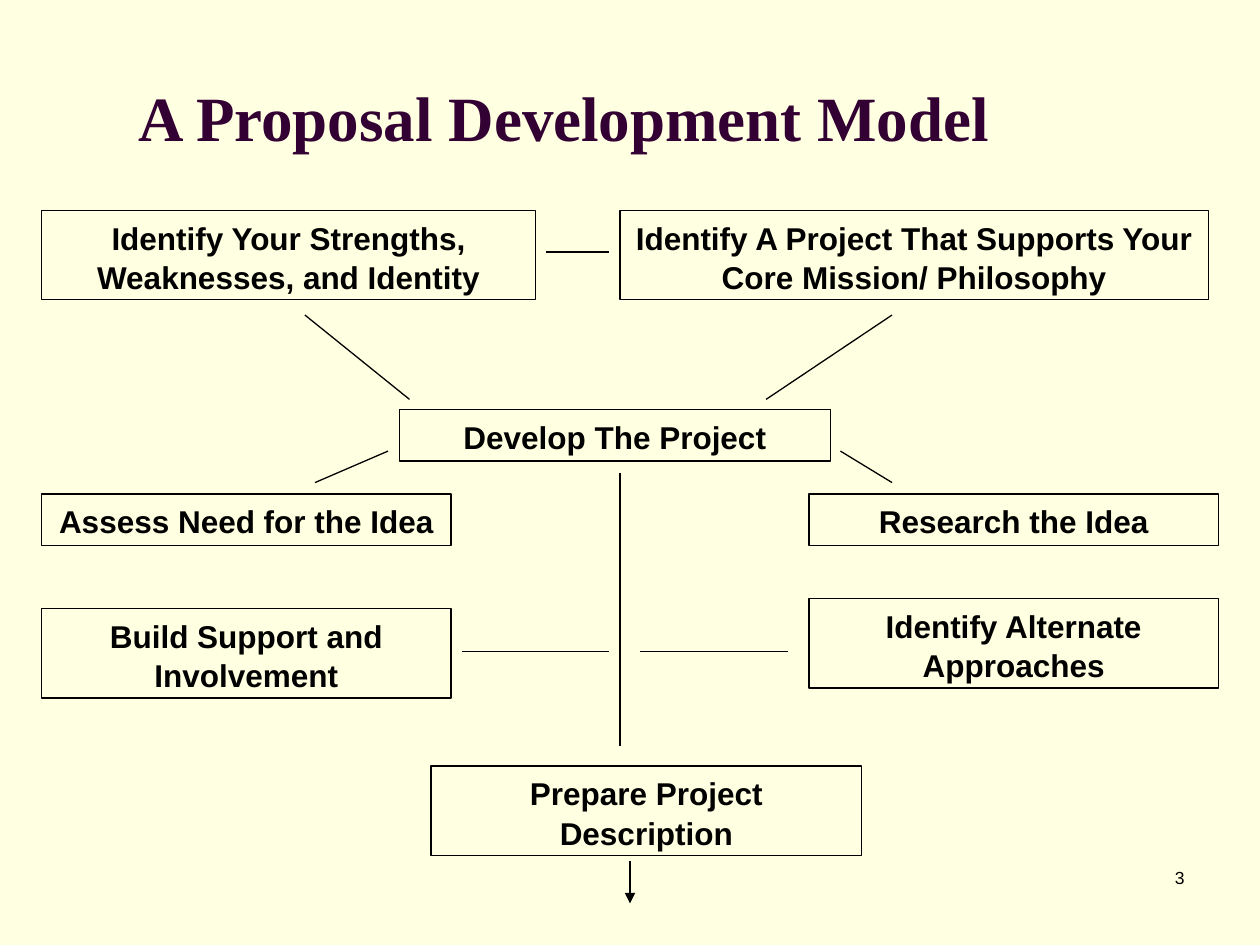
from lxml import etree
from pptx import Presentation
from pptx import util as u
from pptx.dml import color
from pptx.enum import shapes, text
from pptx.oxml import ns

INK = "000000"
BOXES = [
    ("Identify Your Strengths, Weaknesses, and Identity", 0.33, 1.67, 3.92, 0.71),
    ("Identify A Project That Supports Your Core Mission/ Philosophy", 4.92, 1.67, 4.67, 0.71),
    ("Develop The Project", 3.17, 3.25, 3.42, 0.41),
    ("Assess Need for the Idea", 0.33, 3.92, 3.25, 0.41),
    ("Research the Idea", 6.42, 3.92, 3.25, 0.41),
    ("Build Support and Involvement", 0.33, 4.83, 3.25, 0.71),
    ("Identify Alternate Approaches", 6.42, 4.75, 3.25, 0.71),
    ("Prepare Project Description", 3.42, 6.08, 3.42, 0.71),
]
LINES = [
    (4.33, 2, 4.83, 2),
    (2.42, 2.5, 3.25, 3.17),
    (7.08, 2.5, 6.08, 3.17),
    (4.92, 3.75, 4.92, 5.92),
    (3.08, 3.58, 2.5, 3.83),
    (6.67, 3.58, 7.08, 3.83),
    (3.67, 5.17, 4.83, 5.17),
    (5.08, 5.17, 6.25, 5.17),
]


def paint(fill, tone):
    """Give a fill one solid colour."""
    fill.solid()
    fill.fore_color.rgb = color.RGBColor.from_string(tone)


def write(shape, words, size=18, face="Arial", tone=INK, bold=False,
          align="LEFT", anchor="TOP", pitch=1.0):
    """Put formatted text into a shape."""
    frame = shape.text_frame
    frame.word_wrap = True
    frame.vertical_anchor = text.MSO_ANCHOR[anchor]
    para = frame.paragraphs[0]
    para.alignment = text.PP_ALIGN[align]
    para.line_spacing = pitch
    run = para.add_run()
    run.text = words
    run.font.size = u.Pt(size)
    run.font.name = face
    run.font.bold = bold
    paint(run.font.fill, tone)


def label(slide, words, *place, **style):
    """Add a plain text box."""
    write(slide.shapes.add_textbox(*map(u.Inches, place)), words, **style)


def box(slide, words, *place):
    """Add an outlined step of the model."""
    step = slide.shapes.add_shape(shapes.MSO_SHAPE.RECTANGLE, *map(u.Inches, place))
    step.shadow.inherit = False
    step.fill.background()
    paint(step.line.fill, INK)
    step.line.width = u.Pt(0.75)
    write(step, words, bold=True, align="CENTER", pitch=1.05)


def link(slide, *ends, arrow=False):
    """Add a straight line, with an arrowhead at its end if asked."""
    line = slide.shapes.add_connector(shapes.MSO_CONNECTOR.STRAIGHT, *map(u.Inches, ends))
    paint(line.line.fill, INK)
    line.line.width = u.Pt(0.75)
    props = line._element.spPr
    if arrow:
        etree.SubElement(props.find(ns.qn("a:ln")), ns.qn("a:tailEnd"), type="triangle")
    etree.SubElement(props, ns.qn("a:effectLst"))


def main():
    """Build and save the slide."""
    deck = Presentation()
    deck.slide_width, deck.slide_height = u.Inches(10), u.Inches(7.5)
    slide = deck.slides.add_slide(deck.slide_layouts[6])
    paint(slide.background.fill, "FFFFE1")
    label(slide, "3", 7.42, 6.83, 2.08, 0.5, size=10, align="RIGHT")
    label(slide, "A Proposal Development Model", 1, 0.3, 8.5, 1.25, size=36,
          face="Times New Roman", tone="330033", bold=True, anchor="MIDDLE")
    for step in BOXES:
        box(slide, *step)
    for ends in LINES:
        link(slide, *ends)
    link(slide, 5, 6.83, 5, 7.17, arrow=True)
    deck.save("out.pptx")


if __name__ == "__main__":
    main()
